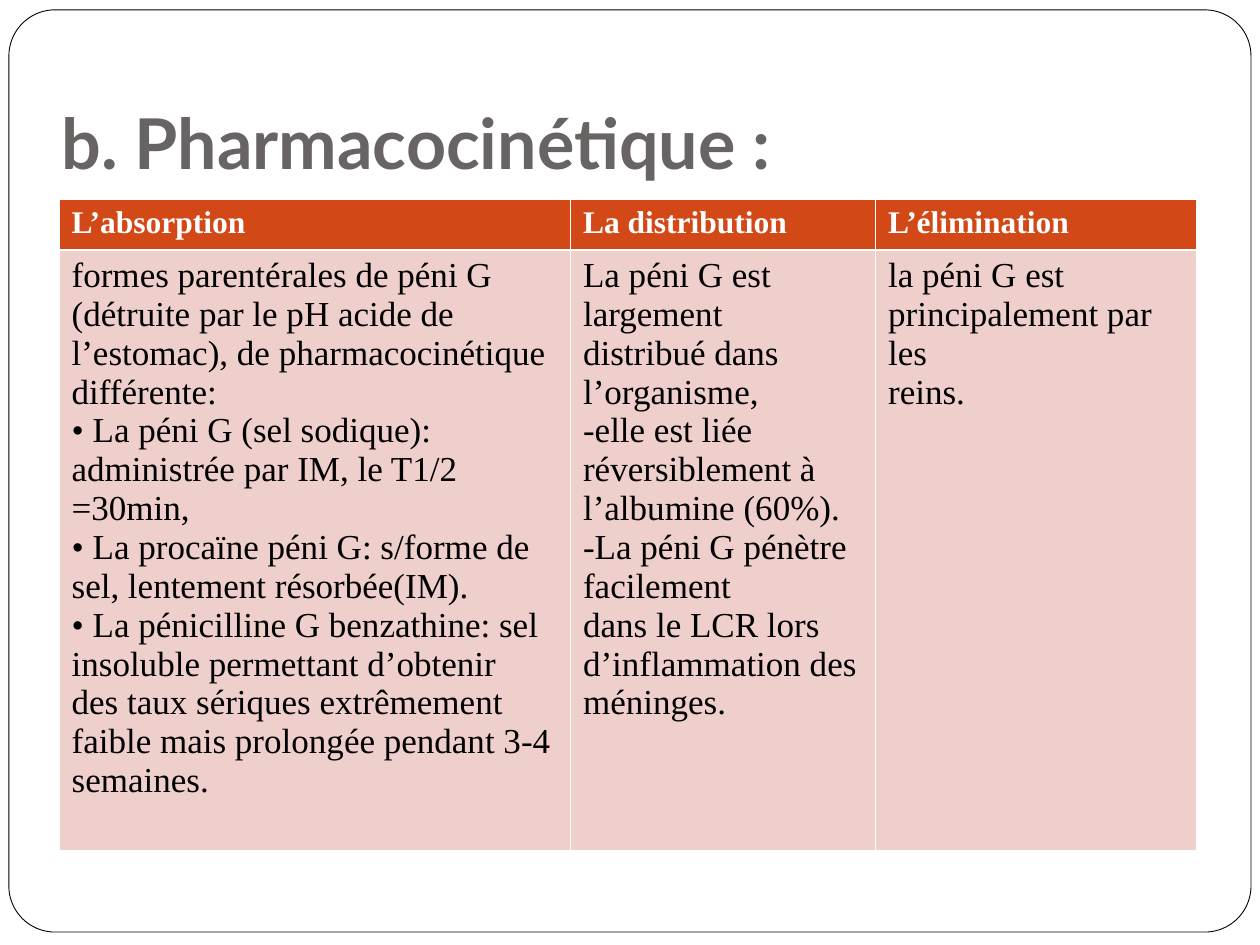
from pptx import Presentation
from pptx.dml.color import RGBColor
from pptx.enum.shapes import MSO_SHAPE
from pptx.enum.text import MSO_ANCHOR
from pptx.util import Cm, Pt

ROUND = MSO_SHAPE.ROUNDED_RECTANGLE
BOTTOM = MSO_ANCHOR.BOTTOM

COLORS = {
    "white": "FFFFFF",
    "black": "000000",
    "title": "696464",
    "head": "D34817",
    "body": "EFCFCC",
}
TITLE = "b. Pharmacocinétique :"
# heading, width in cm, paragraphs
COLUMNS = [
    ("L’absorption", 10.31, [
        "formes parentérales de péni G (détruite par le pH acide de "
        "l’estomac), de pharmacocinétique différente:",
        "• La péni G (sel sodique): administrée par IM, le T1/2 =30min,",
        "• La procaïne péni G: s/forme de sel, lentement résorbée(IM).",
        "• La pénicilline G benzathine: sel insoluble permettant d’obtenir",
        "des taux sériques extrêmement faible mais prolongée pendant 3-4",
        "semaines.",
    ]),
    ("La distribution", 6.15, [
        "La péni G est largement",
        "distribué dans l’organisme,",
        "-elle est liée réversiblement à",
        "l’albumine (60%).",
        "-La péni G pénètre facilement",
        "dans le LCR lors",
        "d’inflammation des méninges.",
    ]),
    ("L’élimination", 6.48, [
        "la péni G est",
        "principalement par les",
        "reins.",
    ]),
]
HEADH, BODYH = 1.03, 11.26


def color(name):
    return RGBColor.from_string(COLORS[name])


def paint(shape, name):
    shape.fill.solid()
    shape.fill.fore_color.rgb = color(name)


def write(frame, lines, face, size, name, bold):
    """Put one paragraph per line into the frame, all in one font."""
    frame.word_wrap = True
    frame.text = "\n".join(lines)
    for para in frame.paragraphs:
        font = para.font
        font.name, font.size, font.bold = face, Pt(size), bold
        font.color.rgb = color(name)


deck = Presentation()
deck.slide_width, deck.slide_height = Cm(25.4), Cm(19.05)
shapes = deck.slides.add_slide(deck.slide_layouts[6]).shapes

border = shapes.add_shape(ROUND, Cm(0.18), Cm(0.2), Cm(25.04), Cm(18.59))
border.adjustments[0] = 0.05
border.shadow.inherit = False
paint(border, "white")
border.line.color.rgb = color("black")
border.line.width = Pt(0.5)

title = shapes.add_textbox(Cm(0.99), Cm(1.57), Cm(23.14), Cm(2.37)).text_frame
title.vertical_anchor = BOTTOM
title.margin_bottom = Cm(0.25)
write(title, [TITLE], "Lato", 40, "title", True)

width = sum(wide for _, wide, _ in COLUMNS)
table = shapes.add_table(2, len(COLUMNS), Cm(1.19), Cm(4.01),
                         Cm(width), Cm(HEADH + BODYH)).table
table.rows[0].height, table.rows[1].height = Cm(HEADH), Cm(BODYH)
for col, (head, wide, lines) in enumerate(COLUMNS):
    table.columns[col].width = Cm(wide)
    top, low = table.cell(0, col), table.cell(1, col)
    paint(top, "head")
    paint(low, "body")
    write(top.text_frame, [head], "Times New Roman", 18, "white", True)
    write(low.text_frame, lines, "Times New Roman", 20, "black", False)

deck.save("out.pptx")
